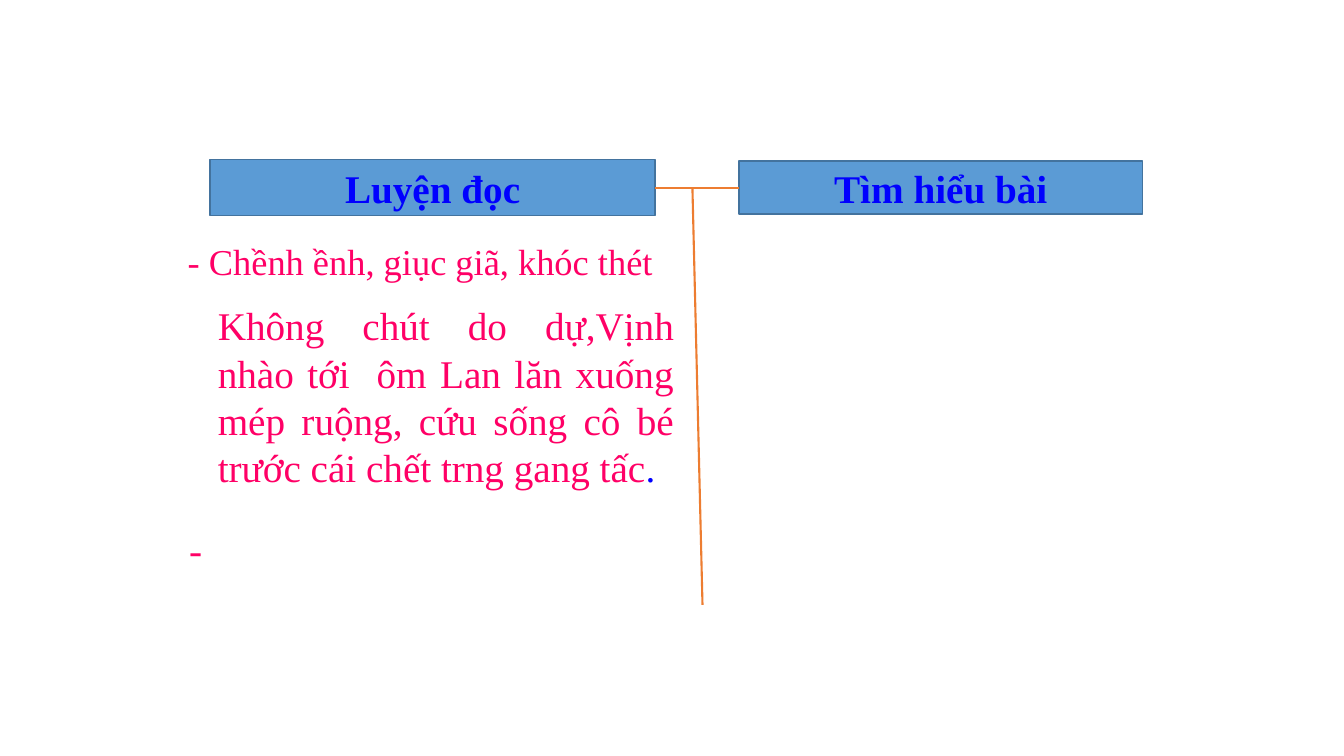
from lxml.etree import SubElement
from pptx import Presentation
from pptx.dml.color import RGBColor
from pptx.enum.shapes import MSO_CONNECTOR, MSO_SHAPE
from pptx.enum.text import MSO_ANCHOR, MSO_AUTO_SIZE, PP_ALIGN
from pptx.oxml.ns import qn
from pptx.util import Pt

BLUE = "0000FF"
PINK = "FF0066"
ORANGE = "ED7D31"


def color(value):
    return RGBColor.from_string(value)


class LessonSlide:
    """Draws the lesson's headings, notes and dividing lines on one slide."""

    font_name = "Times New Roman"
    heading_fill = "5B9BD5"
    heading_line = "43739E"

    def __init__(self, slide):
        self.slide = slide

    def add_run(self, paragraph, text, size, ink, bold=False):
        run = paragraph.add_run()
        run.text = text
        run.font.name = self.font_name
        run.font.size = Pt(size)
        run.font.bold = bold
        run.font.color.rgb = color(ink)

    def heading(self, text, left, top, width, height):
        shape = self.slide.shapes.add_shape(
            MSO_SHAPE.RECTANGLE, Pt(left), Pt(top), Pt(width), Pt(height))
        shape.shadow.inherit = False
        shape.fill.solid()
        shape.fill.fore_color.rgb = color(self.heading_fill)
        shape.line.color.rgb = color(self.heading_line)
        shape.line.width = Pt(1)
        shape.text_frame.vertical_anchor = MSO_ANCHOR.MIDDLE
        paragraph = shape.text_frame.paragraphs[0]
        paragraph.alignment = PP_ALIGN.CENTER
        self.add_run(paragraph, text, 28, BLUE, bold=True)
        return shape

    def line(self, start_x, start_y, end_x, end_y):
        connector = self.slide.shapes.add_connector(
            MSO_CONNECTOR.STRAIGHT, Pt(start_x), Pt(start_y), Pt(end_x), Pt(end_y))
        connector.line.color.rgb = color(ORANGE)
        connector.line.width = Pt(1.5)
        SubElement(connector._element.spPr, qn("a:effectLst"))
        return connector

    def note(self, left, top, width, height, runs):
        box = self.slide.shapes.add_textbox(Pt(left), Pt(top), Pt(width), Pt(height))
        box.text_frame.word_wrap = True
        box.text_frame.auto_size = MSO_AUTO_SIZE.SHAPE_TO_FIT_TEXT
        paragraph = box.text_frame.paragraphs[0]
        paragraph.alignment = PP_ALIGN.JUSTIFY
        for text, size, ink in runs:
            self.add_run(paragraph, text, size, ink)


def main():
    presentation = Presentation()
    presentation.slide_width = Pt(960)
    presentation.slide_height = Pt(540)
    lesson = LessonSlide(presentation.slides.add_slide(presentation.slide_layouts[6]))

    reading = lesson.heading("Luyện đọc", 150, 114, 318, 40)
    study = lesson.heading("Tìm hiểu bài", 528, 115, 288, 38)

    lesson.line(494.6, 134, 501.8, 432)
    bridge = lesson.line(468, 134, 528, 134)
    bridge.begin_connect(reading, 3)
    bridge.end_connect(study, 1)

    lesson.note(128, 372, 354, 41, [("-", 28, PINK)])
    lesson.note(120, 165, 363, 41, [
        (" ", 28, PINK),
        ("- Chềnh ềnh, giục giã, khóc thét", 26, PINK),
    ])
    lesson.note(148.5, 212, 340, 143, [
        ("Không chút do dự,Vịnh nhào tới  ôm Lan lăn xuống mép ruộng, "
         "cứu sống cô bé trước cái chết trng gang tấc", 28, PINK),
        (".", 28, BLUE),
    ])

    presentation.save("out.pptx")


if __name__ == "__main__":
    main()
